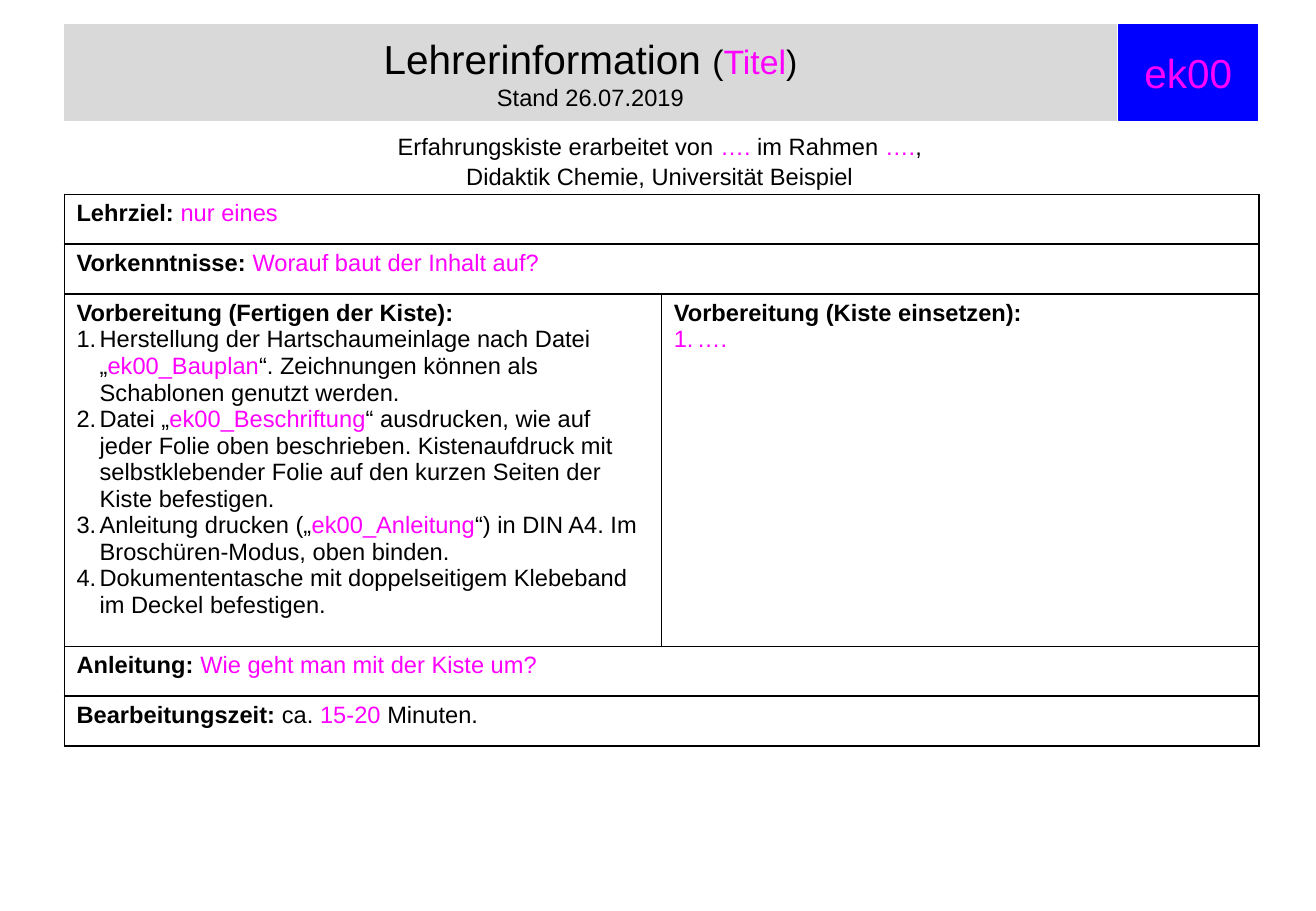
from dataclasses import dataclass
from itertools import product

from lxml import etree
from pptx import Presentation
from pptx.dml.color import RGBColor
from pptx.enum.shapes import MSO_SHAPE
from pptx.enum.text import MSO_ANCHOR, PP_ALIGN
from pptx.oxml.ns import qn
from pptx.slide import Slide
from pptx.table import Table, _Cell
from pptx.text.text import TextFrame, _Paragraph
from pptx.util import Inches, Pt

RECTANGLE = MSO_SHAPE.RECTANGLE
MIDDLE = MSO_ANCHOR.MIDDLE
TOP = MSO_ANCHOR.TOP
CENTER = PP_ALIGN.CENTER
LEFT = PP_ALIGN.LEFT


@dataclass(frozen=True)
class Theme:
    font: str = "Arial"
    text: str = "000000"
    editable: str = "FF00FF"
    title_fill: str = "D9D9D9"
    code_fill: str = "0000FF"
    border: str = "000000"
    heading_size: int = 24
    topic_size: int = 20
    body_size: int = 14


THEME = Theme()


@dataclass(frozen=True)
class Span:
    text: str
    color: str = THEME.text
    size: int = THEME.body_size
    bold: bool = False
    break_after: bool = False


@dataclass(frozen=True)
class Line:
    spans: tuple[Span, ...]
    numbered: bool = False
    align: PP_ALIGN = LEFT
    space_before: float = 0


@dataclass(frozen=True)
class Banner:
    left: float
    width: float
    fill: str
    line: Line


@dataclass(frozen=True)
class Row:
    cells: tuple[tuple[Line, ...], ...]


def editable(text: str, size: int = THEME.body_size) -> Span:
    return Span(text, THEME.editable, size)


def label(text: str) -> Span:
    return Span(text, bold=True)


def entry(*spans: Span) -> Line:
    return Line(spans)


def step(*spans: Span) -> Line:
    return Line(spans, numbered=True)


BANNERS = (
    Banner(0.53, 8.66, THEME.title_fill, Line((
        Span("Lehrerinformation ", size=THEME.heading_size),
        Span("(", size=THEME.topic_size),
        editable("Titel", THEME.topic_size),
        Span(")", size=THEME.topic_size, break_after=True),
        Span("Stand 26.07.2019"),
    ), align=CENTER)),
    Banner(9.21, 1.14, THEME.code_fill, Line(
        (editable("ek00", THEME.heading_size),), align=CENTER)),
)

CREDITS = (
    Line((Span("Erfahrungskiste erarbeitet von "), editable("…."),
          Span(" im Rahmen "), editable("…."), Span(",")), align=CENTER),
    Line((Span("Didaktik Chemie, Universität Beispiel"),), align=CENTER, space_before=1),
)

BUILD_STEPS = (
    entry(label("Vorbereitung (Fertigen der Kiste):")),
    step(Span("Herstellung der Hartschaumeinlage nach Datei „"), editable("ek00_Bauplan"),
         Span("“. Zeichnungen können als Schablonen genutzt werden.")),
    step(Span("Datei „"), editable("ek00_Beschriftung"),
         Span("“ ausdrucken, wie auf jeder Folie oben beschrieben. Kistenaufdruck mit "
              "selbstklebender Folie auf den kurzen Seiten der Kiste befestigen.")),
    step(Span("Anleitung drucken („"), editable("ek00_Anleitung"),
         Span("“) in DIN A4. Im Broschüren-Modus, oben binden.")),
    step(Span("Dokumententasche mit doppelseitigem Klebeband im Deckel befestigen.")),
)

USE_STEPS = (
    entry(label("Vorbereitung (Kiste einsetzen):")),
    step(editable("….")),
)


def single_row(*spans: Span) -> Row:
    return Row(((entry(*spans),),))


ROWS = (
    single_row(label("Lehrziel: "), editable("nur eines")),
    single_row(label("Vorkenntnisse: "), editable("Worauf baut der Inhalt auf?")),
    Row((BUILD_STEPS, USE_STEPS)),
    single_row(label("Anleitung: "), editable("Wie geht man mit der Kiste um?")),
    single_row(label("Bearbeitungszeit: "), Span("ca. "), editable("15-20"), Span(" Minuten.")),
)


def number_paragraph(paragraph: _Paragraph) -> None:
    properties = paragraph._p.get_or_add_pPr()
    indent = Inches(0.19)
    properties.set("marL", str(indent))
    properties.set("indent", str(-indent))
    bullet = etree.Element(qn("a:buAutoNum"), type="arabicPeriod")
    properties.find(qn("a:defRPr")).addprevious(bullet)


def write_lines(frame: TextFrame, lines: tuple[Line, ...]) -> None:
    frame.word_wrap = True
    for index, line in enumerate(lines):
        paragraph = frame.add_paragraph() if index else frame.paragraphs[0]
        paragraph.alignment = line.align
        paragraph.space_before = Pt(line.space_before)
        paragraph.font.name = THEME.font
        if line.numbered:
            number_paragraph(paragraph)
        for span in line.spans:
            run = paragraph.add_run()
            run.text = span.text
            run.font.name = THEME.font
            run.font.size = Pt(span.size)
            run.font.bold = span.bold
            run.font.color.rgb = RGBColor.from_string(span.color)
            if span.break_after:
                paragraph.add_line_break()


def draw_banner(slide: Slide, banner: Banner) -> None:
    shape = slide.shapes.add_shape(
        RECTANGLE, Inches(banner.left), Inches(0.2), Inches(banner.width), Inches(0.79))
    shape.shadow.inherit = False
    color = RGBColor.from_string(banner.fill)
    shape.fill.solid()
    shape.fill.fore_color.rgb = color
    shape.line.color.rgb = color
    shape.line.width = Pt(0.75)
    shape.text_frame.vertical_anchor = MIDDLE
    write_lines(shape.text_frame, (banner.line,))


def draw_credits(slide: Slide) -> None:
    box = slide.shapes.add_textbox(Inches(0.55), Inches(1.04), Inches(9.76), Inches(0.47))
    box.text_frame.vertical_anchor = TOP
    write_lines(box.text_frame, CREDITS)


def style_cell(cell: _Cell) -> None:
    cell.fill.background()
    properties = cell._tc.get_or_add_tcPr()
    for position, side in enumerate(("lnL", "lnR", "lnT", "lnB")):
        border = etree.Element(qn(f"a:{side}"), w=str(Pt(1)))
        fill = etree.SubElement(border, qn("a:solidFill"))
        etree.SubElement(fill, qn("a:srgbClr"), val=THEME.border)
        properties.insert(position, border)


def fill_table(table: Table) -> None:
    table.first_row = False
    table.horz_banding = False
    for row_index, column_index in product(range(len(ROWS)), range(2)):
        style_cell(table.cell(row_index, column_index))
    for row_index, row in enumerate(ROWS):
        table.rows[row_index].height = Inches(0.41)
        if len(row.cells) == 1:
            table.cell(row_index, 0).merge(table.cell(row_index, 1))
        for column_index, lines in enumerate(row.cells):
            write_lines(table.cell(row_index, column_index).text_frame, lines)


def main() -> None:
    presentation = Presentation()
    presentation.slide_width = Inches(10.83)
    presentation.slide_height = Inches(7.5)
    slide = presentation.slides.add_slide(presentation.slide_layouts[6])
    for banner in BANNERS:
        draw_banner(slide, banner)
    draw_credits(slide)
    frame = slide.shapes.add_table(
        len(ROWS), 2, Inches(0.53), Inches(1.6), Inches(9.83), Inches(4.52))
    fill_table(frame.table)
    frame.height = Inches(4.52)
    presentation.save("out.pptx")


if __name__ == "__main__":
    main()
